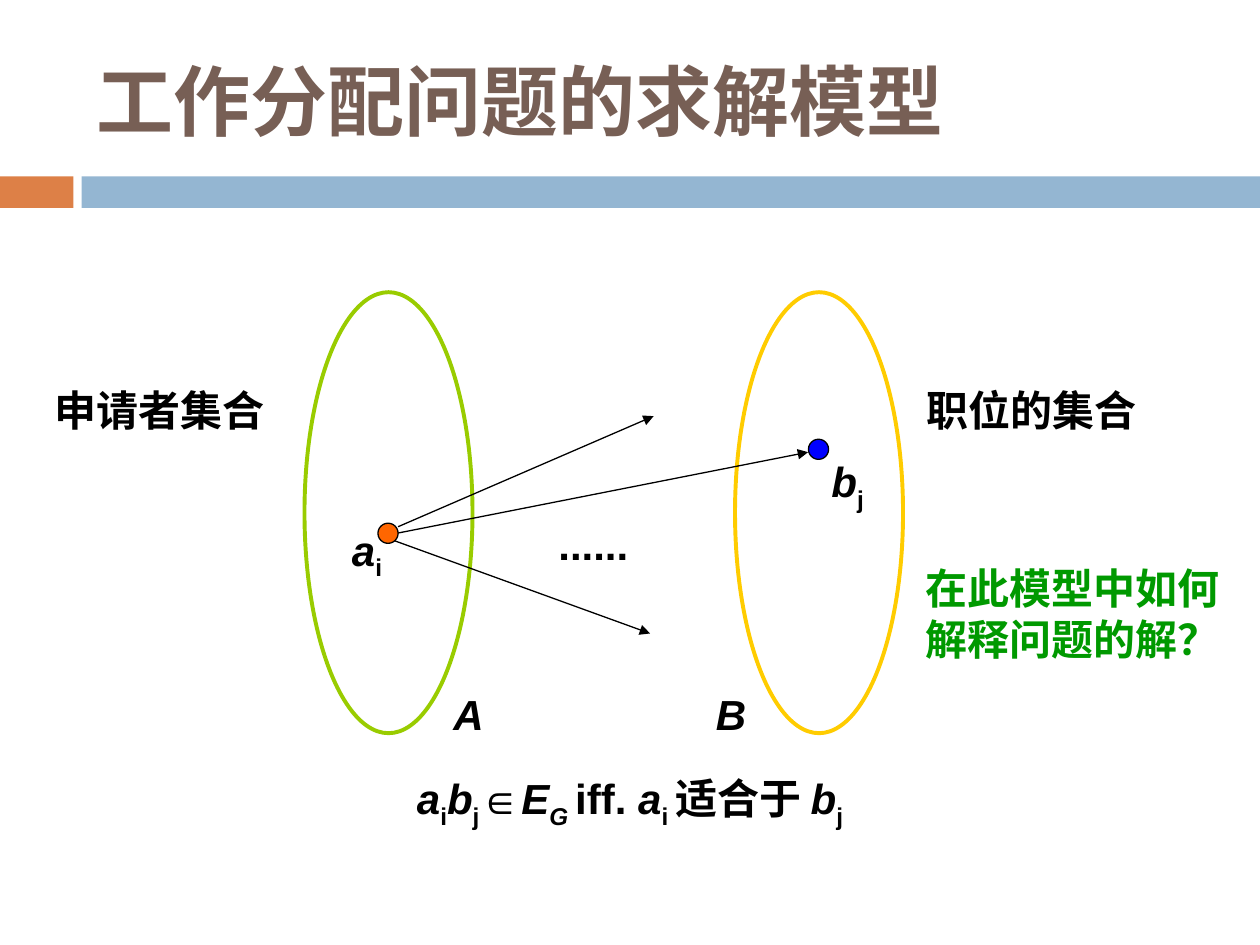
from pptx import Presentation
from pptx.dml.color import RGBColor
from pptx.enum.shapes import MSO_CONNECTOR as LINK, MSO_SHAPE as SHAPE
from pptx.enum.text import MSO_ANCHOR as ANCHOR, PP_ALIGN as ALIGN
from pptx.oxml.ns import qn
from pptx.util import Pt
from lxml.etree import SubElement

BLACK = RGBColor(0x00, 0x00, 0x00)
BROWN = RGBColor(0x77, 0x5F, 0x55)
RUST = RGBColor(0xDD, 0x80, 0x47)
SKY = RGBColor(0x94, 0xB6, 0xD2)
LIME = RGBColor(0x99, 0xCC, 0x00)
GOLD = RGBColor(0xFF, 0xCC, 0x00)
ORANGE = RGBColor(0xFF, 0x66, 0x00)
BLUE = RGBColor(0x00, 0x00, 0xFF)
GREEN = RGBColor(0x00, 0x99, 0x00)

UPRIGHT, ITALIC, SUB, ITALIC_SUB = (False, 0), (True, 0), (False, -25000), (True, -25000)

deck = Presentation()
deck.slide_width, deck.slide_height = Pt(720), Pt(540)
slide = deck.slides.add_slide(deck.slide_layouts[5])
shapes = slide.shapes


def add_figure(kind, box, fill=None, outline=None, weight=0.75):
    figure = shapes.add_shape(kind, *map(Pt, box))
    figure.shadow.inherit = False
    if fill is None:
        figure.fill.background()
    else:
        figure.fill.solid()
        figure.fill.fore_color.rgb = fill
    if outline is None:
        figure.line.fill.background()
    else:
        figure.line.color.rgb = outline
        figure.line.width = Pt(weight)


def add_label(box, pieces, align=ALIGN.LEFT, color=BLACK):
    frame = shapes.add_textbox(*map(Pt, box)).text_frame
    frame.word_wrap = True
    paragraph = frame.paragraphs[0]
    paragraph.alignment = align
    for text, (italic, baseline) in pieces:
        run = paragraph.add_run()
        run.text = text
        format_values = {"name": "Arial", "size": Pt(24), "bold": True, "italic": italic}
        for key, value in format_values.items():
            setattr(run.font, key, value)
        run.font.color.rgb = color
        if baseline:
            run._r.get_or_add_rPr().set("baseline", str(baseline))


add_figure(SHAPE.RECTANGLE, (0, 100.8, 42, 18), RUST)
add_figure(SHAPE.RECTANGLE, (46.6, 100.8, 673.4, 18), SKY)

title = shapes.title
title_box = {"left": Pt(48), "top": Pt(18), "width": Pt(642), "height": Pt(78)}
for key, value in title_box.items():
    setattr(title, key, value)
title.text_frame.text = "工作分配问题的求解模型"
title.text_frame.vertical_anchor = ANCHOR.MIDDLE
heading = title.text_frame.paragraphs[0]
heading.alignment = ALIGN.LEFT
heading_font = heading.runs[0].font
for key, value in {"name": "Cabin", "size": Pt(44), "bold": True}.items():
    setattr(heading_font, key, value)
heading_font.color.rgb = BROWN

for set_left, outline in ((174, LIME), (420, GOLD)):
    add_figure(SHAPE.OVAL, (set_left, 167, 96, 252), outline=outline, weight=2.25)
for node_left, node_top, fill in ((216, 299, ORANGE), (462, 251, BLUE)):
    add_figure(SHAPE.OVAL, (node_left, node_top, 11.5, 11.5), fill, BLACK)

for start_x, start_y, end_x, end_y in (
    (227.5, 304.6, 461.8, 258.4),
    (227.5, 301, 373.5, 237.8),
    (225.4, 309, 371.5, 362),
):
    arrow = shapes.add_connector(LINK.STRAIGHT, Pt(start_x), Pt(start_y), Pt(end_x), Pt(end_y))
    arrow.line.color.rgb = BLACK
    arrow.line.width = Pt(0.75)
    SubElement(arrow.line._get_or_add_ln(), qn("a:tailEnd"), type="triangle")
    SubElement(arrow._element.spPr, qn("a:effectLst"))

a_i = [("a", ITALIC), ("i", SUB)]
b_j = [("b", ITALIC), ("j", SUB)]
for left, top, width, pieces in (
    (252, 390, 60, [("A", ITALIC)]),
    (402, 390, 60, [("B", ITALIC)]),
    (194, 296, 60, a_i),
    (468, 257, 60, b_j),
    (312, 293, 78, [("......", UPRIGHT)]),
    (24, 216, 145, [("申请者集合", UPRIGHT)]),
    (522.5, 216, 158, [("职位的集合", UPRIGHT)]),
):
    add_label((left, top, width, 36), pieces)

edge_rule = [
    *a_i, *b_j, ("∈", UPRIGHT), ("E", ITALIC), ("G ", ITALIC_SUB), ("iff. ", UPRIGHT),
    ("a", ITALIC), ("i ", SUB), ("适合于 ", UPRIGHT), *b_j,
]
add_label((210, 438, 300, 36), edge_rule, ALIGN.CENTER)
add_label((517, 318, 192, 65.5), [("在此模型中如何解释问题的解？", UPRIGHT)], ALIGN.CENTER, GREEN)

deck.save("out.pptx")
